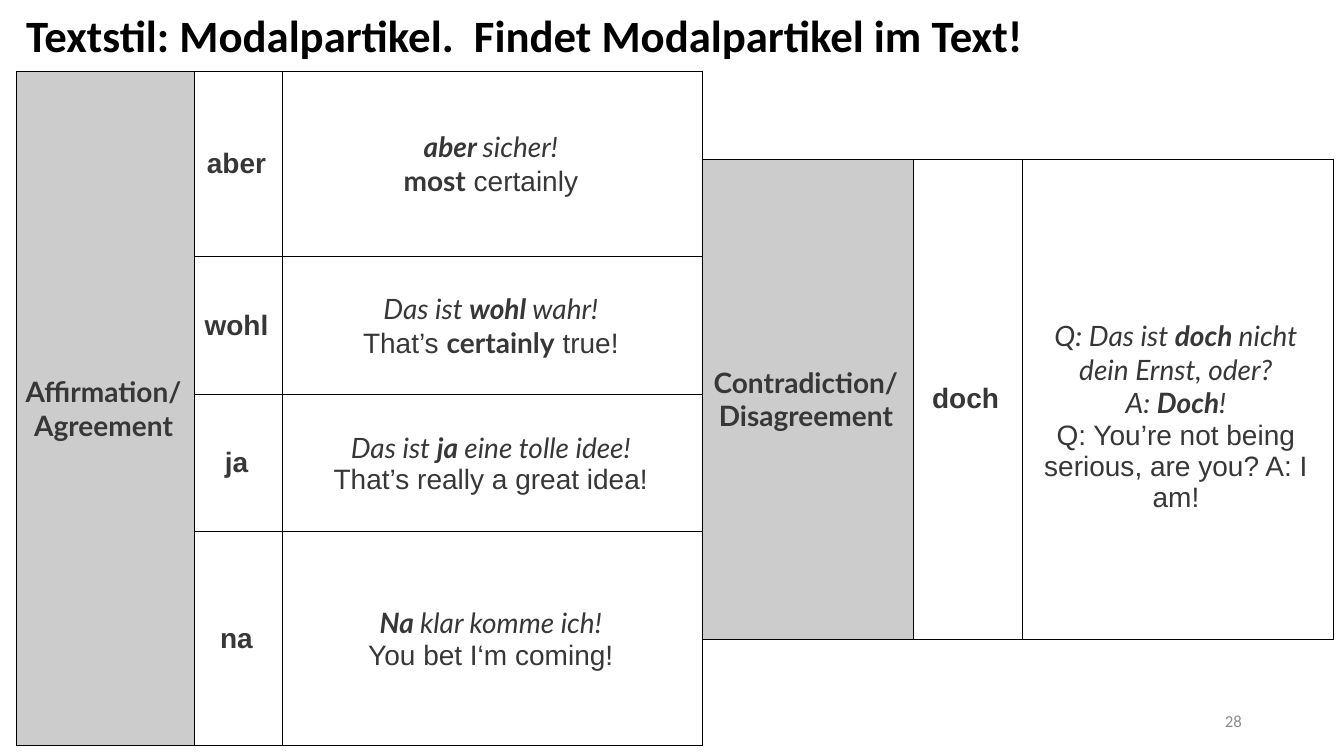
import dataclasses

import lxml.etree
import pptx
import pptx.dml.color
import pptx.enum.text
import pptx.oxml.ns
import pptx.util

Cm = pptx.util.Cm
Pt = pptx.util.Pt
RGBColor = pptx.dml.color.RGBColor
Align = pptx.enum.text.PP_ALIGN
Anchor = pptx.enum.text.MSO_ANCHOR


@dataclasses.dataclass(frozen=True)
class Theme:
    title_color: str = "000000"
    text_color: str = "373737"
    number_color: str = "8C8C8C"
    category_fill: str = "CCCCCC"
    cell_fill: str = "FFFFFF"
    border_color: str = "000000"
    border_width: float = 0.75
    title_size: int = 32
    table_size: int = 20
    number_size: int = 12
    heading_font: str = "Calibri"
    german_font: str = "Lato"
    english_font: str = "Arial"


THEME = Theme()

# Voices: (font, bold, italic)
CATEGORY = (THEME.german_font, True, False)
PARTICLE = (THEME.english_font, True, False)
GERMAN = (THEME.german_font, False, True)
GERMAN_KEY = (THEME.german_font, True, True)
ENGLISH = (THEME.english_font, False, False)
ENGLISH_KEY = (THEME.german_font, True, False)

AFFIRMATION = [
    ("aber", [("aber ", GERMAN_KEY), ("sicher!\n", GERMAN),
              ("most", ENGLISH_KEY), (" certainly", ENGLISH)]),
    ("wohl", [("Das ist ", GERMAN), ("wohl ", GERMAN_KEY), ("wahr!\n", GERMAN),
              ("That’s ", ENGLISH), ("certainly", ENGLISH_KEY), (" true!", ENGLISH)]),
    ("ja", [("Das ist ", GERMAN), ("ja ", GERMAN_KEY), ("eine tolle idee!\n", GERMAN),
            ("That’s really a great idea!", ENGLISH)]),
    ("na", [("Na ", GERMAN_KEY), ("klar komme ich!\n", GERMAN),
            ("You bet I‘m coming!", ENGLISH)]),
]
CONTRADICTION = [
    ("doch", [("Q: Das ist ", GERMAN), ("doch ", GERMAN_KEY),
              ("nicht dein Ernst, oder?\nA: ", GERMAN), ("Doch", GERMAN_KEY), ("!\n", GERMAN),
              ("Q: You’re not being serious, are you? A: I am!", ENGLISH)]),
]


class SlideBuilder:
    def __init__(self, slide, theme):
        self.slide = slide
        self.theme = theme

    def text(self, wording, left, top, width, height, size, color, bold=False, align=Align.LEFT,
             line_spacing=1.0):
        frame = self.slide.shapes.add_textbox(Cm(left), Cm(top), Cm(width), Cm(height)).text_frame
        frame.word_wrap = True
        frame.vertical_anchor = Anchor.MIDDLE
        paragraph = frame.paragraphs[0]
        paragraph.text = wording
        paragraph.alignment = align
        paragraph.line_spacing = line_spacing
        font = paragraph.font
        font.name, font.size, font.bold = self.theme.heading_font, Pt(size), bold
        font.color.rgb = RGBColor.from_string(color)

    def particle_table(self, category, entries, left, top, widths, heights, margins, example_top):
        """Build a table of particles and examples; example_top is the examples' top margin."""
        table = self.slide.shapes.add_table(
            len(heights), len(widths), Cm(left), Cm(top), Cm(sum(widths)), Cm(sum(heights))).table
        table.first_row = table.horz_banding = False
        for column, width in zip(table.columns, widths):
            column.width = Cm(width)
        for row, height in zip(table.rows, heights):
            row.height = Cm(height)
        for index, (particle, example) in enumerate(entries):
            phrases = [[(category, CATEGORY)] if index == 0 else [], [(particle, PARTICLE)], example]
            for column, phrase in enumerate(phrases):
                cell = table.cell(index, column)
                self.cell(cell, phrase, margins, is_category=column == 0)
            cell.margin_top = Cm(example_top)
        if len(entries) > 1:
            table.cell(0, 0).merge(table.cell(len(entries) - 1, 0))

    def cell(self, cell, phrase, margins, is_category):
        theme = self.theme
        cell.margin_left, cell.margin_top, cell.margin_right, cell.margin_bottom = map(Cm, margins)
        cell.vertical_anchor = Anchor.MIDDLE
        cell.fill.solid()
        cell.fill.fore_color.rgb = RGBColor.from_string(
            theme.category_fill if is_category else theme.cell_fill)
        paragraph = cell.text_frame.paragraphs[0]
        paragraph.alignment = Align.CENTER
        paragraph.font.size = Pt(theme.table_size)
        for wording, voice in phrase:
            for number, line in enumerate(wording.split("\n")):
                if number:
                    paragraph.add_line_break()
                if line:
                    self.run(paragraph, line, voice)
        self.borders(cell)

    def run(self, paragraph, wording, voice):
        run = paragraph.add_run()
        run.text = wording
        run.font.name, run.font.bold, run.font.italic = voice
        run.font.size = Pt(self.theme.table_size)
        run.font.color.rgb = RGBColor.from_string(self.theme.text_color)

    def borders(self, cell):
        qn = pptx.oxml.ns.qn
        properties = cell._tc.get_or_add_tcPr()
        for position, side in enumerate(("a:lnL", "a:lnR", "a:lnT", "a:lnB")):
            line = lxml.etree.Element(qn(side), w=str(Pt(self.theme.border_width)))
            fill = lxml.etree.SubElement(line, qn("a:solidFill"))
            lxml.etree.SubElement(fill, qn("a:srgbClr"), val=self.theme.border_color)
            properties.insert(position, line)


def main():
    presentation = pptx.Presentation()
    presentation.slide_width, presentation.slide_height = Cm(33.87), Cm(19.05)
    slide = presentation.slides.add_slide(presentation.slide_layouts[6])
    builder = SlideBuilder(slide, THEME)

    builder.particle_table("Affirmation/\nAgreement", AFFIRMATION, 0.41, 1.8,
                           widths=(4.48, 2.22, 10.6), heights=(4.66, 3.48, 3.46, 5.38),
                           margins=(0.1, 0.1, 0.18, 0.1), example_top=0.1)
    builder.text("Textstil: Modalpartikel.  Findet Modalpartikel im Text!", 0.41, 0.13, 31.34, 1.68,
                 THEME.title_size, THEME.title_color, bold=True, line_spacing=0.9)
    builder.particle_table("Contradiction/\nDisagreement", CONTRADICTION, 17.71, 4.01,
                           widths=(5.3, 2.75, 7.85), heights=(12.1,),
                           margins=(0.15, 0.15, 0.25, 0.15), example_top=1)
    builder.text("28", 23.93, 17.65, 7.62, 1.02, THEME.number_size, THEME.number_color,
                 align=Align.RIGHT)
    presentation.save("out.pptx")


if __name__ == "__main__":
    main()
